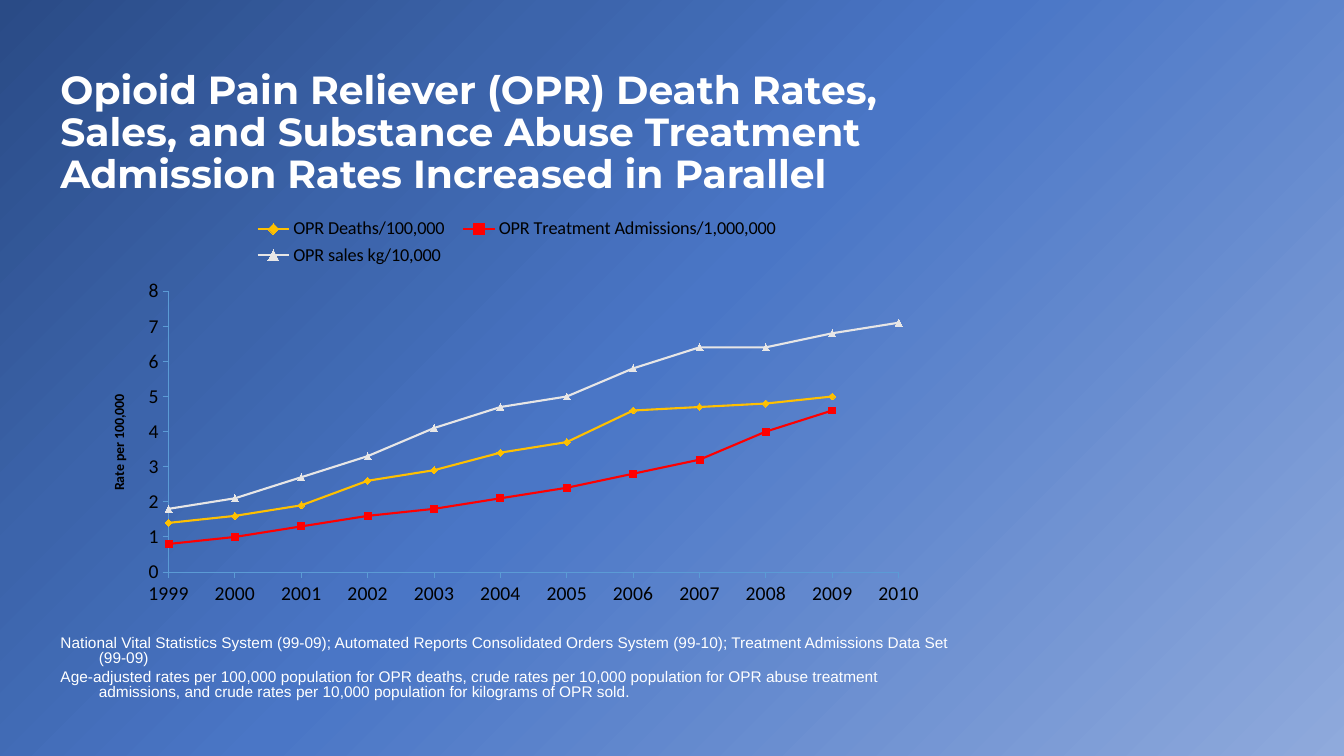
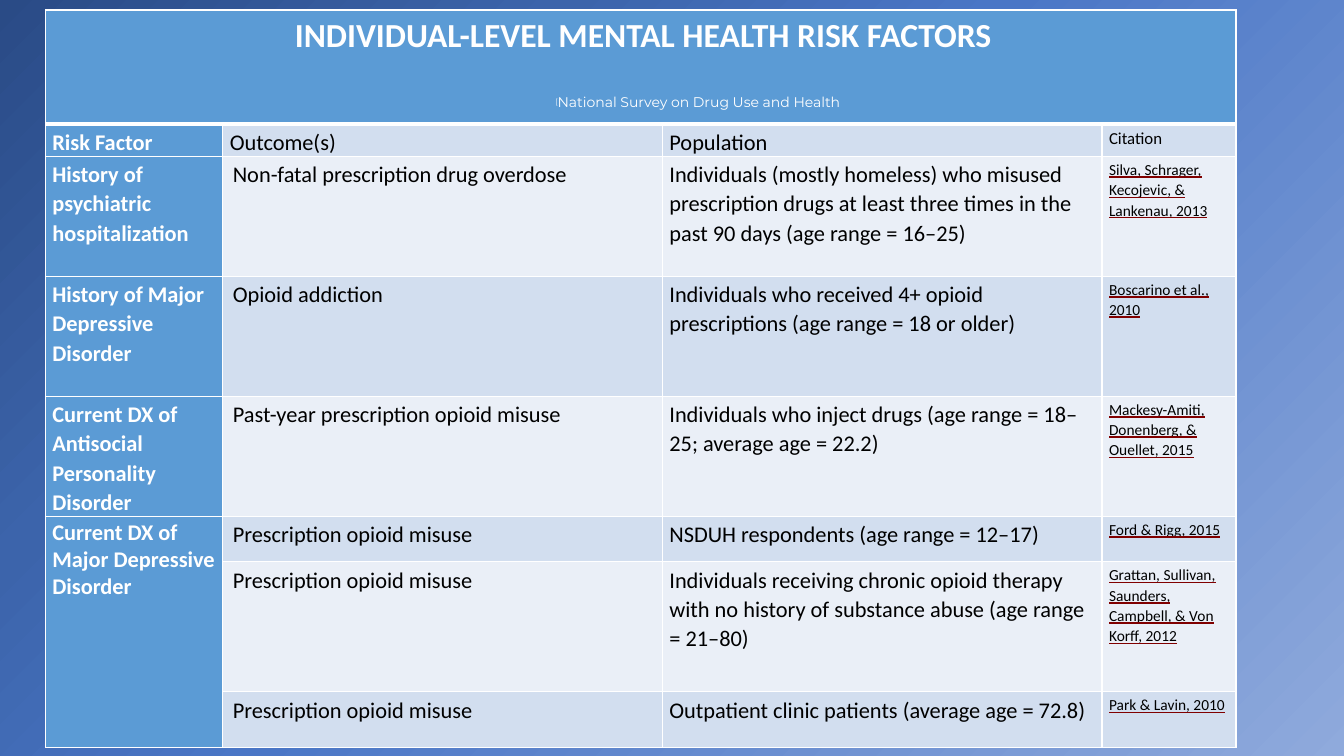
"""Build two slides on opioid trends and mental health risk factors."""
from dataclasses import dataclass

from pptx import Presentation
from pptx.chart.data import CategoryChartData
from pptx.dml.color import RGBColor
from pptx.enum.chart import XL_CHART_TYPE as ChartType
from pptx.enum.chart import XL_LEGEND_POSITION as LegendPlace
from pptx.enum.chart import XL_MARKER_STYLE as Marker
from pptx.enum.chart import XL_TICK_MARK as Tick
from pptx.enum.text import MSO_ANCHOR as Anchor
from pptx.enum.text import MSO_AUTO_SIZE as AutoSize
from pptx.enum.text import PP_ALIGN as Align
from pptx.oxml import parse_xml
from pptx.oxml.ns import nsdecls
from pptx.util import Inches, Pt


@dataclass(frozen=True)
class Theme:
    gradient: tuple = ((0, "2A4B86"), (27, "3C64AB"), (48, "4A76C6"), (100, "8FAADC"))
    white: str = "FFFFFF"
    black: str = "000000"
    accent: str = "5B9BD5"
    bands: tuple = ("D2DEEF", "EAEFF7")
    underline: str = "800000"
    deaths: str = "FFC000"
    admissions: str = "FF0000"
    sales: str = "E7E6E6"
    heading: str = "Montserrat"
    notes: str = "Arial"
    body: str = "Calibri"
    title_size: int = 28
    banner_size: int = 24
    cell_size: int = 16
    axis_size: int = 14
    legend_size: int = 13
    label_size: int = 12
    note_size: int = 11
    small_size: int = 10
    mark_size: int = 9


theme = Theme()


def assign(target, **values):
    for name, value in values.items():
        setattr(target, name, value)


def style(font, face, size, colour, **values):
    assign(font, name=face, size=Pt(size), **values)
    font.color.rgb = RGBColor.from_string(colour)


deck = Presentation()
assign(deck, slide_width=Inches(13.33), slide_height=Inches(7.5))
backdrop = deck.slide_master.background.fill
backdrop.gradient()
backdrop.gradient_angle = 315
stops = deck.slide_master.element.xpath("p:cSld/p:bg//a:gsLst")[0]
for stop in list(stops):
    stops.remove(stop)
for position, colour in theme.gradient:
    stops.append(parse_xml(
        f'<a:gs {nsdecls("a")} pos="{position * 1000}"><a:srgbClr val="{colour}"/></a:gs>'))

page = deck.slides.add_slide(deck.slide_layouts[1])
title, notes = page.placeholders
assign(title, left=Inches(0.5), top=Inches(0.5), width=Inches(9), height=Inches(1.5))
assign(notes, left=Inches(0.5), top=Inches(6.33), width=Inches(9.1), height=Inches(0.67))
for holder in (title, notes):
    assign(holder.text_frame, auto_size=AutoSize.NONE, word_wrap=True,
           vertical_anchor=Anchor.BOTTOM)

title.text_frame.text = ("Opioid Pain Reliever (OPR) Death Rates, Sales, and Substance Abuse "
                         "Treatment Admission Rates Increased in Parallel")
para = title.text_frame.paragraphs[0]
assign(para, alignment=Align.LEFT, line_spacing=Pt(30))
style(para.runs[0].font, theme.heading, theme.title_size, theme.white, bold=True)

notes.text_frame.text = "\n".join((
    "National Vital Statistics System (99-09); Automated Reports Consolidated Orders System "
    "(99-10); Treatment Admissions Data Set (99-09)",
    "Age-adjusted rates per 100,000 population for OPR deaths, crude rates per 10,000 population "
    "for OPR abuse treatment admissions, and crude rates per 10,000 population for kilograms of "
    "OPR sold."))
for para in notes.text_frame.paragraphs:
    assign(para, line_spacing=Pt(11), space_before=Pt(2.2))
    style(para.runs[0].font, theme.notes, theme.note_size, theme.white)
    properties = para._p.get_or_add_pPr()
    properties.set("marL", str(Inches(0.38)))
    properties.set("indent", str(Inches(-0.38)))
    properties.append(parse_xml(f'<a:buNone {nsdecls("a")}/>'))

series_formats = (
    ("OPR Deaths/100,000", theme.deaths, Marker.DIAMOND,
     (1.4, 1.6, 1.9, 2.6, 2.9, 3.4, 3.7, 4.6, 4.7, 4.8, 5, None)),
    ("OPR Treatment Admissions/1,000,000", theme.admissions, Marker.SQUARE,
     (0.8, 1, 1.3, 1.6, 1.8, 2.1, 2.4, 2.8, 3.2, 4, 4.6, None)),
    ("OPR sales kg/10,000", theme.sales, Marker.TRIANGLE,
     (1.8, 2.1, 2.7, 3.3, 4.1, 4.7, 5, 5.8, 6.4, 6.4, 6.8, 7.1)),
)
rates = CategoryChartData()
rates.categories = [str(year) for year in range(1999, 2011)]
for name, _, _, values in series_formats:
    rates.add_series(name, values)
chart = page.shapes.add_chart(ChartType.LINE_MARKERS, Inches(0.83), Inches(2.04),
                              Inches(8.42), Inches(4.04), rates).chart
assign(chart, has_title=False, has_legend=True)
style(chart.font, theme.body, theme.small_size, theme.black)
assign(chart.legend, position=LegendPlace.TOP, include_in_layout=False)
style(chart.legend.font, theme.body, theme.legend_size, theme.black)
chart.plots[0].vary_by_categories = False
for series, (_, colour, marker, _) in zip(chart.plots[0].series, series_formats):
    series.smooth = False
    assign(series.marker, style=marker, size=5)
    series.format.line.width = Pt(1.5)
    series.format.line.color.rgb = RGBColor.from_string(colour)
    series.marker.format.fill.solid()
    series.marker.format.fill.fore_color.rgb = RGBColor.from_string(colour)
    series.marker.format.line.color.rgb = RGBColor.from_string(colour)

for axis in (chart.category_axis, chart.value_axis):
    assign(axis, has_major_gridlines=False, major_tick_mark=Tick.OUTSIDE,
           minor_tick_mark=Tick.NONE)
    style(axis.tick_labels.font, theme.body, theme.axis_size, theme.black)
    axis.format.line.width = Pt(0.75)
    axis.format.line.color.rgb = RGBColor.from_string(theme.accent)
assign(chart.value_axis, minimum_scale=0, maximum_scale=8, major_unit=1)
assign(chart.value_axis.tick_labels, number_format="0", number_format_is_linked=False)
caption = chart.value_axis.axis_title.text_frame
caption.text = "Rate per 100,000"
style(caption.paragraphs[0].runs[0].font, theme.body, theme.small_size, theme.black, bold=True)

for crossing in chart.element.xpath(".//c:valAx/c:crossBetween"):
    crossing.getparent().remove(crossing)
chart.element.xpath(".//c:valAx/c:crosses")[0].addnext(
    parse_xml(f'<c:crossBetween {nsdecls("c")} val="midCat"/>'))
layouts = (
    ("plotArea", 0, '<c:layoutTarget val="inner"/>', (0.1, 0.21, 0.86, 0.69)),
    ("legend", 1, "", (0.19, 0.02, 0.64, 0.14)),
)
for part, index, target, bounds in layouts:
    area = chart.element.xpath(f".//c:{part}")[0]
    for old in area.xpath("c:layout"):
        area.remove(old)
    modes = "".join(f'<c:{side}Mode val="edge"/>' for side in "xy")
    sizes = "".join(f'<c:{side} val="{value}"/>' for side, value in zip("xywh", bounds))
    area.insert(index, parse_xml(
        f'<c:layout {nsdecls("c")}><c:manualLayout>{target}{modes}{sizes}'
        '</c:manualLayout></c:layout>'))

page = deck.slides.add_slide(deck.slide_layouts[6])
misuse = "Prescription opioid misuse"
rows = (
    (1.13, ("INDIVIDUAL-LEVEL MENTAL HEALTH RISK FACTORS", "", "", "")),
    (0.32, ("Risk Factor", "Outcome(s)", "Population", "Citation")),
    (1.19, ("History of psychiatric hospitalization", "Non-fatal prescription drug overdose",
            "Individuals (mostly homeless) who misused prescription drugs at least three times "
            "in the past 90 days (age range = 16–25)",
            "Silva, Schrager,\nKecojevic, &\nLankenau, 2013")),
    (1.19, ("History of Major Depressive Disorder", "Opioid addiction",
            "Individuals who received 4+ opioid prescriptions (age range = 18 or older)",
            "Boscarino et al., 2010")),
    (1.19, ("Current DX of Antisocial Personality Disorder",
            "Past-year prescription opioid misuse",
            "Individuals who inject drugs (age range = 18–25; average age = 22.2)",
            "Mackesy-Amiti,\nDonenberg, &\nOuellet, 2015")),
    (0.45, ("Current DX of Major Depressive Disorder", misuse,
            "NSDUH respondents (age range = 12–17)", "Ford & Rigg, 2015")),
    (1.29, ("", misuse, "Individuals receiving chronic opioid therapy with no history of "
            "substance abuse (age range = 21–80)",
            "Grattan, Sullivan,\nSaunders,\nCampbell, & Von\nKorff, 2012")),
    (0.55, ("", misuse, "Outpatient clinic patients (average age = 72.8)",
            "Park & Lavin, 2010")),
)
widths = (1.76, 4.36, 4.36, 1.33)
table = page.shapes.add_table(len(rows), len(widths), Inches(0.45), Inches(0.1),
                              Inches(sum(widths)),
                              Inches(sum(height for height, _ in rows))).table
for column, width in zip(table.columns, widths):
    column.width = Inches(width)
table.cell(0, 0).merge(table.cell(0, 3))
table.cell(5, 0).merge(table.cell(7, 0))

for row, (height, texts) in enumerate(rows):
    table.rows[row].height = Inches(height)
    for column, text in enumerate(texts):
        cell = table.cell(row, column)
        assign(cell, margin_left=Inches(0.07), margin_top=Inches(0.03),
               margin_right=Inches(0.02), margin_bottom=0, vertical_anchor=Anchor.TOP)
        is_heading = row == 0 or column == 0
        is_citation = row > 1 and column == 3
        cell.fill.solid()
        cell.fill.fore_color.rgb = RGBColor.from_string(
            theme.accent if is_heading else theme.bands[(row + 1) % 2])
        for index, side in enumerate("LRTB"):
            thick = (row, side) in ((0, "B"), (1, "T"))
            cell._tc.get_or_add_tcPr().insert(index, parse_xml(
                f'<a:ln{side} {nsdecls("a")} w="{Pt(3 if thick else 1)}"><a:solidFill>'
                f'<a:srgbClr val="{theme.white}"/></a:solidFill></a:ln{side}>'))
        if not text:
            continue
        size = theme.cell_size
        if row == 0:
            size = theme.banner_size
        elif column == 3:
            size = theme.note_size if is_citation else theme.label_size
        cell.text_frame.text = text
        for para in cell.text_frame.paragraphs:
            assign(para, line_spacing=0.99 if (row, column) == (5, 0) else 1.07,
                   alignment=Align.CENTER if row == 0 else Align.LEFT)
            if row > 1 and column == 1:
                para._p.get_or_add_pPr().set("marL", str(Inches(0.03)))
            span = para.runs[0]
            style(span.font, theme.body, size, theme.white if is_heading else theme.black,
                  bold=is_heading, underline=is_citation)
            if is_citation:
                span._r.xpath("a:rPr/a:latin")[0].addprevious(parse_xml(
                    f'<a:uFill {nsdecls("a")}><a:solidFill>'
                    f'<a:srgbClr val="{theme.underline}"/></a:solidFill></a:uFill>'))

box = page.shapes.add_textbox(Inches(5.41), Inches(0.88), Inches(4), Inches(0.27))
assign(box.text_frame, word_wrap=True, vertical_anchor=Anchor.MIDDLE)
para = box.text_frame.paragraphs[0]
for text, size, baseline in (("[", theme.mark_size, 30000),
                             ("National Survey on Drug Use and Health", theme.small_size, 0)):
    span = para.add_run()
    span.text = text
    style(span.font, theme.heading, size, theme.white)
    span._r.get_or_add_rPr().set("baseline", str(baseline))

deck.save("out.pptx")
